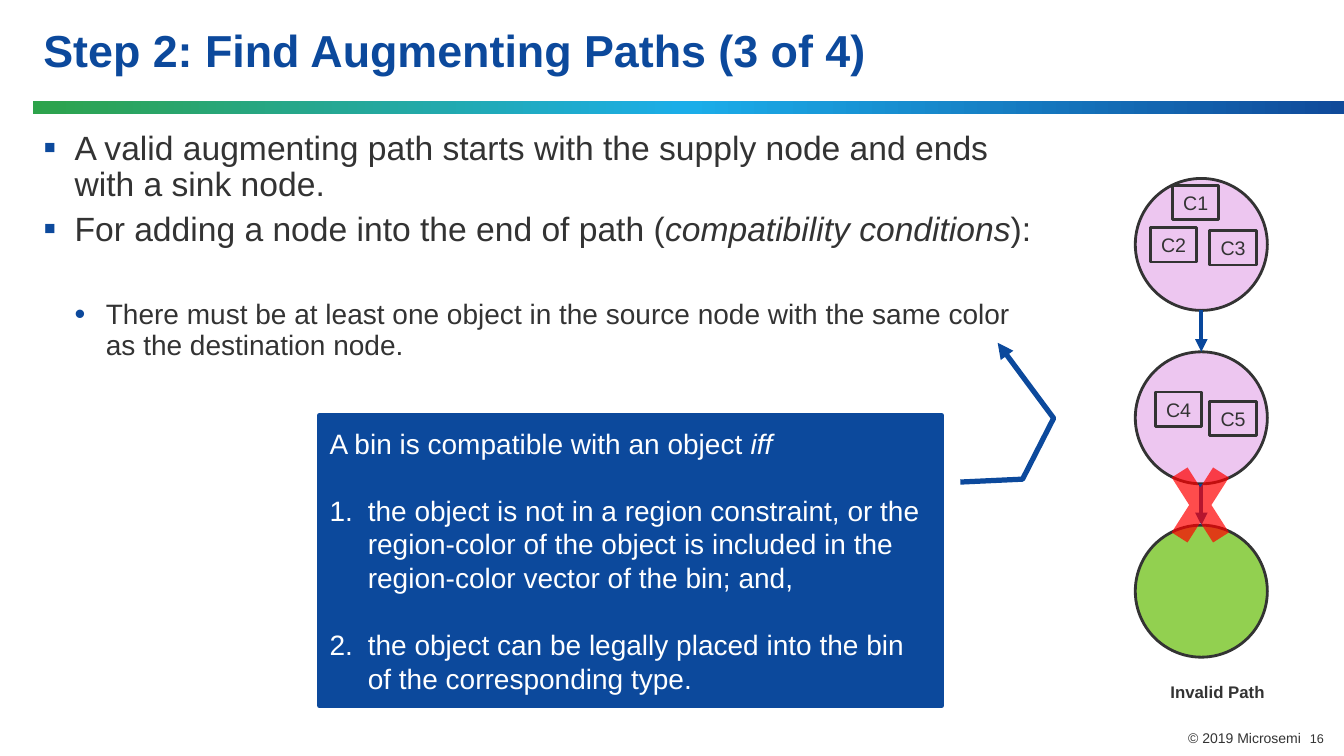
"""Build the slide on compatibility conditions for augmenting paths."""
import copy
from dataclasses import dataclass

import lxml.etree
import pptx
import pptx.dml.color
import pptx.enum.shapes
import pptx.enum.text
import pptx.oxml.ns
import pptx.util

Inches = pptx.util.Inches
Pt = pptx.util.Pt
Shapes = pptx.enum.shapes.MSO_SHAPE
Align = pptx.enum.text.PP_ALIGN
Anchor = pptx.enum.text.MSO_ANCHOR
qn = pptx.oxml.ns.qn

COLORS = {
    "navy": "0C499C", "arrow": "08479C", "text": "333333", "white": "FFFFFF",
    "pink": "EDC6F0", "green": "92D050", "red": "FF0000",
    "band_left": "2DA34B", "band_middle": "1BADE9", "band_right": "104A9A",
}
NODE_SIZE = 1.31
NODE_LEFT = 11.26
NODE_TOP = 1.77
NODE_STEP = 1.72


@dataclass
class Cell:
    label: str
    left: float
    top: float


@dataclass
class Node:
    color: str
    cells: list[Cell]


@dataclass
class Caption:
    text: str
    box: tuple[float, float, float, float]
    size: float
    align: Align
    bold: bool = False


@dataclass
class Item:
    pieces: list[tuple[str, bool]]
    size: float
    before: float
    level: int = 0
    bullet: str = ""
    numbered: bool = False


NODES = [
    Node("pink", [Cell("C2", 11.41, 2.26), Cell("C1", 11.63, 1.84), Cell("C3", 12, 2.29)]),
    Node("pink", [Cell("C4", 11.46, 3.89), Cell("C5", 12, 3.98)]),
    Node("green", []),
]
CAPTIONS = [
    Caption("16", (10.9, 7.2, 2.33, 0.4), 9, Align.RIGHT),
    Caption("© 2019 Microsemi", (8.94, 7.19, 4.06, 0.27), 10, Align.RIGHT),
    Caption("Invalid Path", (11.51, 6.71, 1.15, 0.3), 12, Align.LEFT, True),
]
CONDITIONS = [
    Item([("A valid augmenting path starts with the supply node and ends with a sink node.", False)],
         24, 0, bullet="▪"),
    Item([("For adding a node into the end of path (", False),
          ("compatibility conditions", True), ("):", False)], 24, 6, bullet="▪"),
    Item([("There must be at least one object in the source node with the same color "
           "as the destination node.", False)], 20, 37.5, level=1, bullet="•"),
]
COMPATIBILITY = [
    Item([("A bin is compatible with an object ", False), ("iff", True)], 20, 0),
    Item([("the object is not in a region constraint, or the region-color of the object "
           "is included in the region-color vector of the bin; and,", False)],
         20, 24, numbered=True),
    Item([("the object can be legally placed into the bin of the corresponding type.", False)],
         20, 24, numbered=True),
]


def rgb(color: str) -> pptx.dml.color.RGBColor:
    """Return the named colour."""
    return pptx.dml.color.RGBColor.from_string(COLORS[color])


def inches(*lengths: float) -> list[pptx.util.Length]:
    """Convert numbers to lengths."""
    return [Inches(length) for length in lengths]


def style(font, size: float, color: str = "text", bold: bool = False, italic: bool = False) -> None:
    """Format a font."""
    font.name, font.size, font.bold, font.italic = "Arial", Pt(size), bold, italic
    font.color.rgb = rgb(color)


def add_figure(slide, kind: Shapes, box: tuple, fill: str, line: str = "", width: float = 2):
    """Add a flat preset shape."""
    figure = slide.shapes.add_shape(kind, *inches(*box))
    figure.shadow.inherit = False
    figure.fill.solid()
    figure.fill.fore_color.rgb = rgb(fill)
    if line:
        figure.line.color.rgb = rgb(line)
        figure.line.width = Pt(width)
    else:
        figure.line.fill.background()
    return figure


def add_arrowhead(line) -> None:
    """Put a triangle at the end of a line."""
    lxml.etree.SubElement(line._get_or_add_ln(), qn("a:tailEnd"), type="triangle")


def add_bullet(paragraph, item: Item) -> None:
    """Give a paragraph its indent and its bullet or number."""
    props = paragraph._p.get_or_add_pPr()
    indent = 0.38 if item.numbered else 0.31
    props.set("marL", str(Inches(indent * (item.level + 1))))
    props.set("indent", str(-Inches(indent)))
    if item.numbered:
        lxml.etree.SubElement(props, qn("a:buAutoNum"), type="arabicPeriod")
        return
    bullet_color = lxml.etree.SubElement(props, qn("a:buClr"))
    lxml.etree.SubElement(bullet_color, qn("a:srgbClr"), val=COLORS["navy"])
    lxml.etree.SubElement(props, qn("a:buSzPct"), val="110000")
    lxml.etree.SubElement(props, qn("a:buFont"), typeface="Arial")
    lxml.etree.SubElement(props, qn("a:buChar"), char=item.bullet)


def write_items(frame, items: list[Item], color: str, spacing: float) -> None:
    """Fill a text frame with paragraphs."""
    for index, item in enumerate(items):
        paragraph = frame.add_paragraph() if index else frame.paragraphs[0]
        paragraph.level = item.level
        paragraph.alignment = Align.LEFT
        paragraph.line_spacing = spacing
        paragraph.space_before = Pt(item.before)
        if item.bullet or item.numbered:
            add_bullet(paragraph, item)
        for text, italic in item.pieces:
            run = paragraph.add_run()
            run.text = text
            style(run.font, item.size, color, italic=italic)


def add_caption(slide, caption: Caption) -> None:
    """Add a one-line text box."""
    frame = slide.shapes.add_textbox(*inches(*caption.box)).text_frame
    frame.word_wrap = caption.align == Align.RIGHT
    frame.text = caption.text
    frame.paragraphs[0].alignment = caption.align
    style(frame.paragraphs[0].runs[0].font, caption.size, bold=caption.bold)


def add_band(slide) -> None:
    """Add the gradient band under the title."""
    band = add_figure(slide, Shapes.RECTANGLE, (0.33, 1, 13, 0.13), "navy")
    band.fill.gradient()
    band.fill.gradient_angle = 0
    stops = band._element.spPr.find(qn("a:gradFill")).find(qn("a:gsLst"))
    stops.insert(1, copy.deepcopy(stops[0]))
    for index, color in enumerate(("band_left", "band_middle", "band_right")):
        stop = band.fill.gradient_stops[index]
        stop.position = index / 2
        stop.color.rgb = rgb(color)


def add_cell(slide, cell: Cell, color: str) -> None:
    """Add a box with its label centred."""
    box = add_figure(slide, Shapes.RECTANGLE, (cell.left, cell.top, 0.46, 0.34), color, "text")
    frame = box.text_frame
    frame.margin_left = frame.margin_right = frame.margin_top = frame.margin_bottom = 0
    frame.vertical_anchor = Anchor.MIDDLE
    frame.text = cell.label
    frame.paragraphs[0].alignment = Align.CENTER
    style(frame.paragraphs[0].runs[0].font, 14)


def add_path(slide) -> None:
    """Add the chain of nodes with their cells and arrows."""
    center = NODE_LEFT + NODE_SIZE / 2
    for index, node in enumerate(NODES):
        top = NODE_TOP + index * NODE_STEP
        add_figure(slide, Shapes.OVAL, (NODE_LEFT, top, NODE_SIZE, NODE_SIZE), node.color, "text")
        for cell in node.cells:
            add_cell(slide, cell, node.color)
        if index:
            ends = inches(center, top - NODE_STEP + NODE_SIZE, center, top)
            edge = slide.shapes.add_connector(pptx.enum.shapes.MSO_CONNECTOR.STRAIGHT, *ends)
            edge.line.color.rgb = rgb("arrow")
            edge.line.width = Pt(3)
            add_arrowhead(edge.line)
            lxml.etree.SubElement(edge._element.spPr, qn("a:effectLst"))
    cross = add_figure(slide, Shapes.MATH_MULTIPLY, (11.51, 4.39, 0.79, 1.24), "red")
    red = cross._element.spPr.find(qn("a:solidFill"))[0]
    lxml.etree.SubElement(red, qn("a:alpha"), val="70000")


def add_definition(slide) -> None:
    """Add the callout that defines compatibility."""
    callout = add_figure(slide, Shapes.LINE_CALLOUT_3, (3.17, 4.12, 6.17, 2.88), "navy", "navy", 3.75)
    for index, value in enumerate((0.23, 1.03, 0.22, 1.13, 0.01, 1.18, -0.25, 1.09)):
        callout.adjustments[index] = value
    add_arrowhead(callout.line)
    callout.text_frame.vertical_anchor = Anchor.MIDDLE
    write_items(callout.text_frame, COMPATIBILITY, "white", 1.0)


def main() -> None:
    """Build and save the slide."""
    deck = pptx.Presentation()
    deck.slide_width, deck.slide_height = inches(13.33, 7.5)
    slide = deck.slides.add_slide(deck.slide_layouts[1])
    title, body = slide.placeholders
    title.left, title.top, title.width, title.height = inches(0.33, 0, 12.67, 1)
    heading = title.text_frame
    heading.text = "Step 2: Find Augmenting Paths (3 of 4)"
    heading.margin_bottom = 0
    heading.vertical_anchor = Anchor.MIDDLE
    heading.paragraphs[0].alignment = Align.LEFT
    heading.paragraphs[0].line_spacing = 0.9
    style(heading.paragraphs[0].runs[0].font, 32, "navy", bold=True)
    body.left, body.top, body.width, body.height = inches(0.33, 1.25, 10.09, 5.83)
    body.text_frame.auto_size = pptx.enum.text.MSO_AUTO_SIZE.NONE
    write_items(body.text_frame, CONDITIONS, "text", 0.9)
    add_band(slide)
    add_path(slide)
    add_definition(slide)
    for caption in CAPTIONS:
        add_caption(slide, caption)
    deck.save("out.pptx")


if __name__ == "__main__":
    main()
